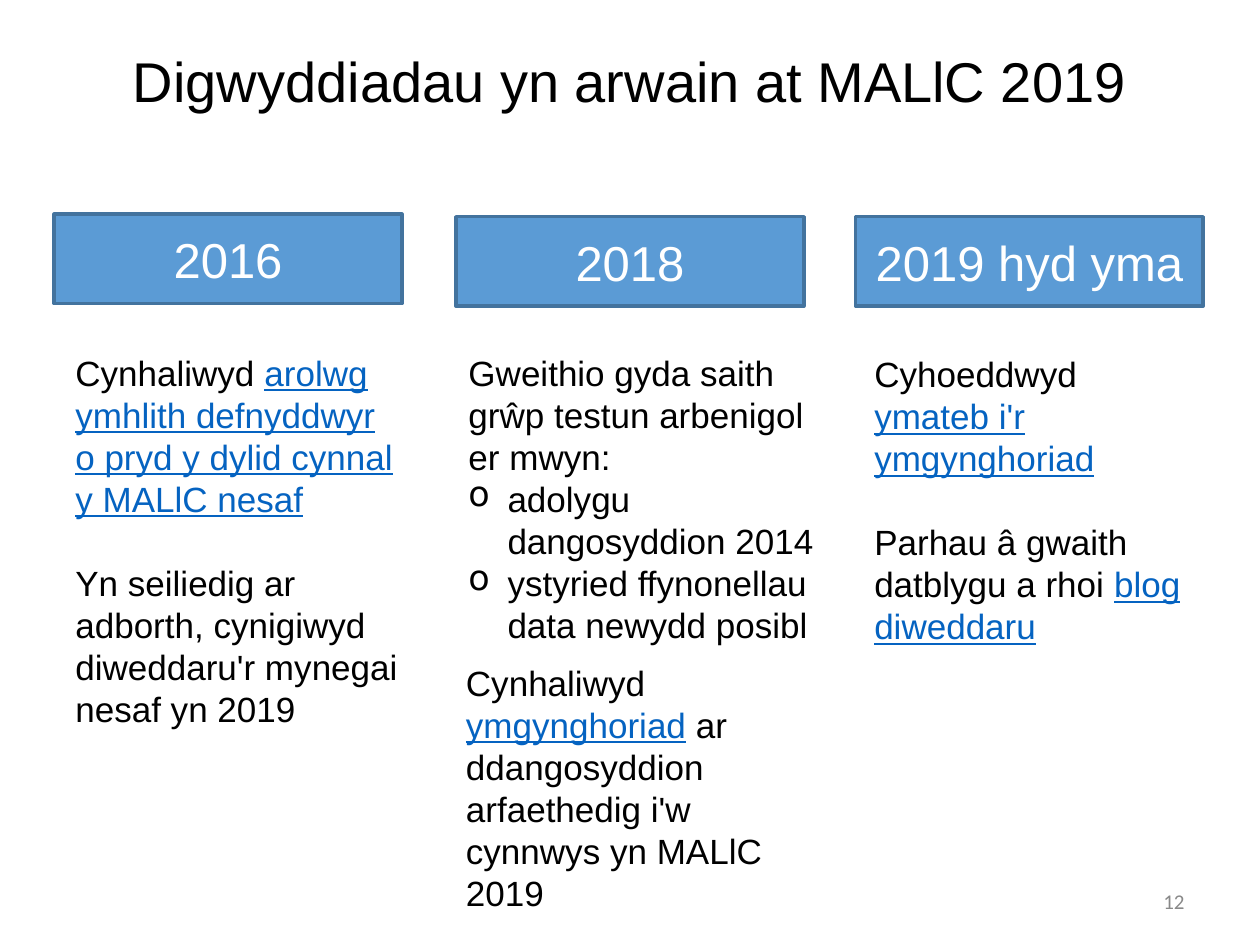
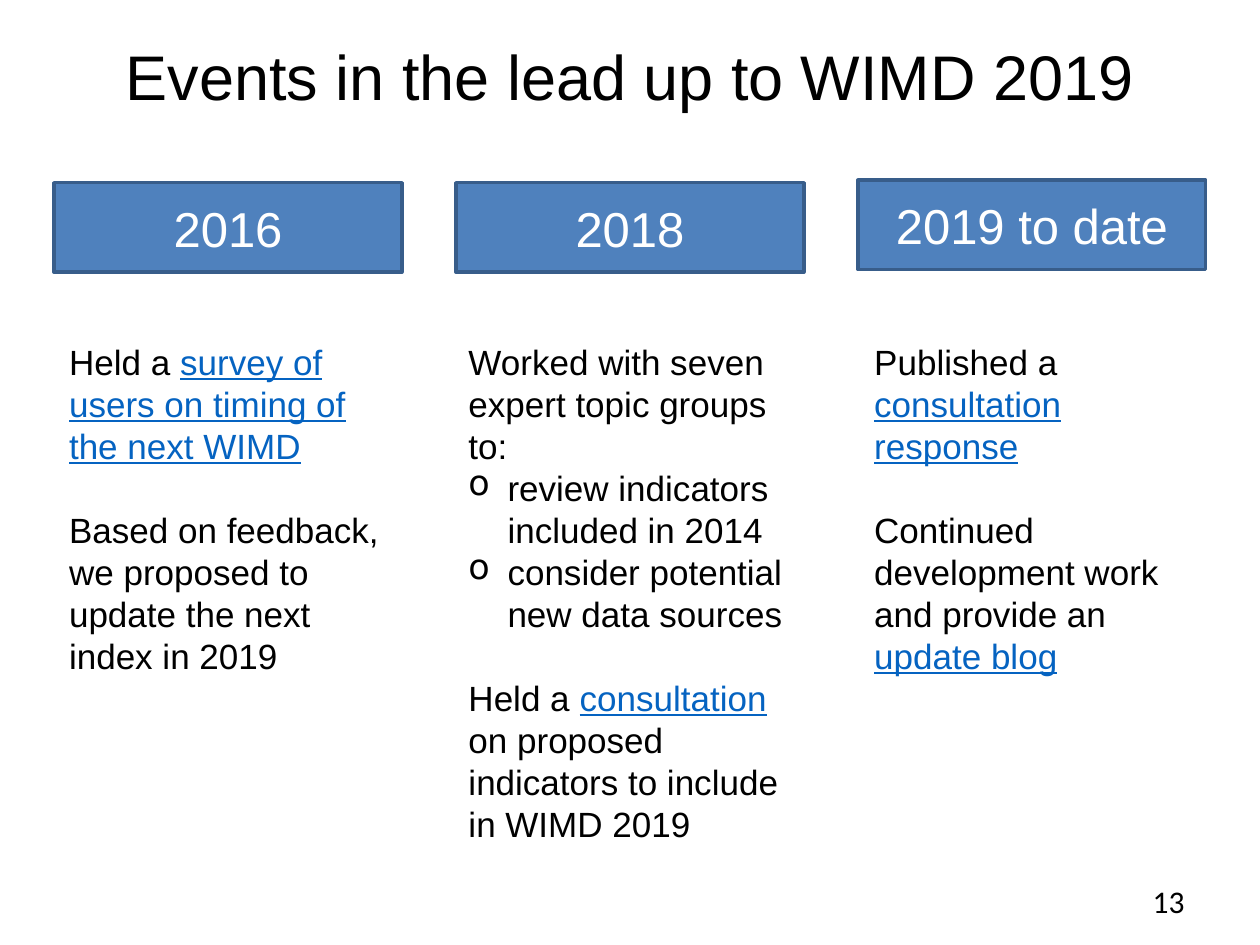
from dataclasses import dataclass

from lxml import etree
from pptx import Presentation
from pptx.dml.color import RGBColor
from pptx.enum.shapes import MSO_SHAPE
from pptx.enum.text import MSO_ANCHOR, MSO_AUTO_SIZE, PP_ALIGN
from pptx.oxml.ns import qn
from pptx.util import Inches, Pt

RECTANGLE = MSO_SHAPE.RECTANGLE
MIDDLE = MSO_ANCHOR.MIDDLE
GROW = MSO_AUTO_SIZE.SHAPE_TO_FIT_TEXT
NO_AUTOFIT = MSO_AUTO_SIZE.NONE
CENTER, RIGHT = PP_ALIGN.CENTER, PP_ALIGN.RIGHT

BLACK = RGBColor(0x00, 0x00, 0x00)
WHITE = RGBColor(0xFF, 0xFF, 0xFF)
GREY = RGBColor(0x89, 0x89, 0x89)
LINK_BLUE = RGBColor(0x05, 0x63, 0xC1)
SKY_FILL = RGBColor(0x5B, 0x9B, 0xD5)
SKY_LINE = RGBColor(0x43, 0x73, 0x9E)
STEEL_FILL = RGBColor(0x4F, 0x81, 0xBD)
STEEL_LINE = RGBColor(0x38, 0x5D, 0x8A)

TEXT_FONT, NUMBER_FONT = "Arial", "Calibri"
BODY_SIZE, BAND_SIZE = 20, 28
BAND_WIDTH, BAND_HEIGHT = 2.76, 0.71
BLANK_LINE = Pt(24)
BULLET_INDENT = Inches(0.31)


@dataclass(frozen=True)
class Passage:
    """A paragraph whose pieces alternate between plain and link style."""
    pieces: tuple[str, ...]
    bullet: bool = False
    gap: bool = False


@dataclass(frozen=True)
class Band:
    label: str
    left: float
    top: float


@dataclass(frozen=True)
class TextBlock:
    left: float
    top: float
    width: float
    height: float
    passages: tuple[Passage, ...]


@dataclass(frozen=True)
class EventsSlide:
    title: str
    title_top: float
    title_size: int
    fill: RGBColor
    line: RGBColor
    bands: tuple[Band, ...]
    blocks: tuple[TextBlock, ...]
    number: str
    number_size: int
    number_color: RGBColor


WELSH = EventsSlide(
    "Digwyddiadau yn arwain at MALlC 2019", 0.25, 32, SKY_FILL, SKY_LINE,
    (Band("2016", 0.43, 1.7), Band("2018", 3.62, 1.72), Band("2019 hyd yma", 6.79, 1.72)),
    (
        TextBlock(0.5, 2.74, 2.76, 3.47, (
            Passage(("Cynhaliwyd ", "arolwg ymhlith defnyddwyr o pryd y dylid cynnal y MALlC nesaf")),
            Passage(("Yn seiliedig ar adborth, cynigiwyd diweddaru'r mynegai nesaf yn 2019",), gap=True),
        )),
        TextBlock(3.62, 2.74, 3.03, 2.46, (
            Passage(("Gweithio gyda saith grŵp testun arbenigol er mwyn:",)),
            Passage(("adolygu dangosyddion 2014",), bullet=True),
            Passage(("ystyried ffynonellau data newydd posibl",), bullet=True),
        )),
        TextBlock(6.84, 2.75, 2.71, 2.79, (
            Passage(("Cyhoeddwyd ", "ymateb i'r ymgynghoriad")),
            Passage(("Parhau â gwaith datblygu a rhoi ", "blog diweddaru"), gap=True),
        )),
        TextBlock(3.6, 5.2, 3.07, 2.46, (
            Passage(("Cynhaliwyd ", "ymgynghoriad",
                     " ar ddangosyddion arfaethedig i'w cynnwys yn MALlC 2019")),
        )),
    ),
    "12", 12, GREY,
)

ENGLISH = EventsSlide(
    "Events in the lead up to WIMD 2019", 0.21, 36, STEEL_FILL, STEEL_LINE,
    (Band("2016", 0.43, 1.45), Band("2018", 3.62, 1.45), Band("2019 to date", 6.81, 1.43)),
    (
        TextBlock(0.45, 2.65, 2.76, 3.1, (
            Passage(("Held a ", "survey of users on timing of the next WIMD")),
            Passage(("Based on feedback, we proposed to update the next index in 2019",), gap=True),
        )),
        TextBlock(3.62, 2.65, 2.76, 4.38, (
            Passage(("Worked with seven expert topic groups to:",)),
            Passage(("review indicators included in 2014",), bullet=True),
            Passage(("consider potential new data sources",), bullet=True),
            Passage(("Held a ", "consultation",
                     " on proposed indicators to include in WIMD 2019"), gap=True),
        )),
        TextBlock(6.84, 2.65, 2.76, 3.13, (
            Passage(("Published a ", "consultation response")),
            Passage(("Continued development work and provide an ", "update blog"), gap=True),
        )),
    ),
    "13", 18, BLACK,
)


def style_paragraph(paragraph, size: int, color: RGBColor, align=None, font: str = TEXT_FONT) -> None:
    paragraph.alignment = align
    paragraph.font.name = font
    paragraph.font.size = Pt(size)
    paragraph.font.color.rgb = color


def set_line(shape, text: str, size: int, color: RGBColor, align, font: str = TEXT_FONT) -> None:
    """Fill a shape with one vertically centred line of text."""
    frame = shape.text_frame
    frame.text = text
    frame.word_wrap = True
    frame.auto_size = NO_AUTOFIT
    frame.vertical_anchor = MIDDLE
    style_paragraph(frame.paragraphs[0], size, color, align, font)


def add_bullet(paragraph) -> None:
    properties = paragraph._p.get_or_add_pPr()
    properties.set("marL", str(BULLET_INDENT))
    properties.set("indent", str(-BULLET_INDENT))
    bullet = etree.Element(qn("a:buChar"), char="o")
    properties.insert_element_before(bullet, "a:tabLst", "a:defRPr", "a:extLst")


def add_title(slide, content: EventsSlide) -> None:
    title = slide.shapes.title
    title.left, title.top = Inches(0.5), Inches(content.title_top)
    title.width, title.height = Inches(9), Inches(0.77)
    set_line(title, content.title, content.title_size, BLACK, CENTER)


def add_band(slide, band: Band, fill: RGBColor, line: RGBColor) -> None:
    shape = slide.shapes.add_shape(RECTANGLE, Inches(band.left), Inches(band.top),
                                   Inches(BAND_WIDTH), Inches(BAND_HEIGHT))
    shape.shadow.inherit = False
    shape.fill.solid()
    shape.fill.fore_color.rgb = fill
    shape.line.color.rgb = line
    shape.line.width = Pt(2)
    set_line(shape, band.label, BAND_SIZE, WHITE, CENTER)


def add_text_block(slide, block: TextBlock) -> None:
    box = slide.shapes.add_textbox(Inches(block.left), Inches(block.top),
                                   Inches(block.width), Inches(block.height))
    frame = box.text_frame
    frame.word_wrap = True
    frame.auto_size = GROW
    for index, passage in enumerate(block.passages):
        paragraph = frame.add_paragraph() if index else frame.paragraphs[0]
        style_paragraph(paragraph, BODY_SIZE, BLACK)
        if passage.gap:
            paragraph.space_before = BLANK_LINE
        if passage.bullet:
            add_bullet(paragraph)
        for position, piece in enumerate(passage.pieces):
            run = paragraph.add_run()
            run.text = piece
            if position % 2:
                run.font.underline = True
                run.font.color.rgb = LINK_BLUE


def add_slide_number(slide, content: EventsSlide) -> None:
    box = slide.shapes.add_textbox(Inches(7.17), Inches(6.95), Inches(2.33), Inches(0.4))
    set_line(box, content.number, content.number_size, content.number_color, RIGHT, NUMBER_FONT)


def add_events_slide(presentation, content: EventsSlide) -> None:
    slide = presentation.slides.add_slide(presentation.slide_layouts.get_by_name("Title Only"))
    add_title(slide, content)
    for band in content.bands:
        add_band(slide, band, content.fill, content.line)
    for block in content.blocks:
        add_text_block(slide, block)
    add_slide_number(slide, content)


def main() -> None:
    presentation = Presentation()
    presentation.slide_width, presentation.slide_height = Inches(10), Inches(7.5)
    for content in (WELSH, ENGLISH):
        add_events_slide(presentation, content)
    presentation.save("out.pptx")


if __name__ == "__main__":
    main()
